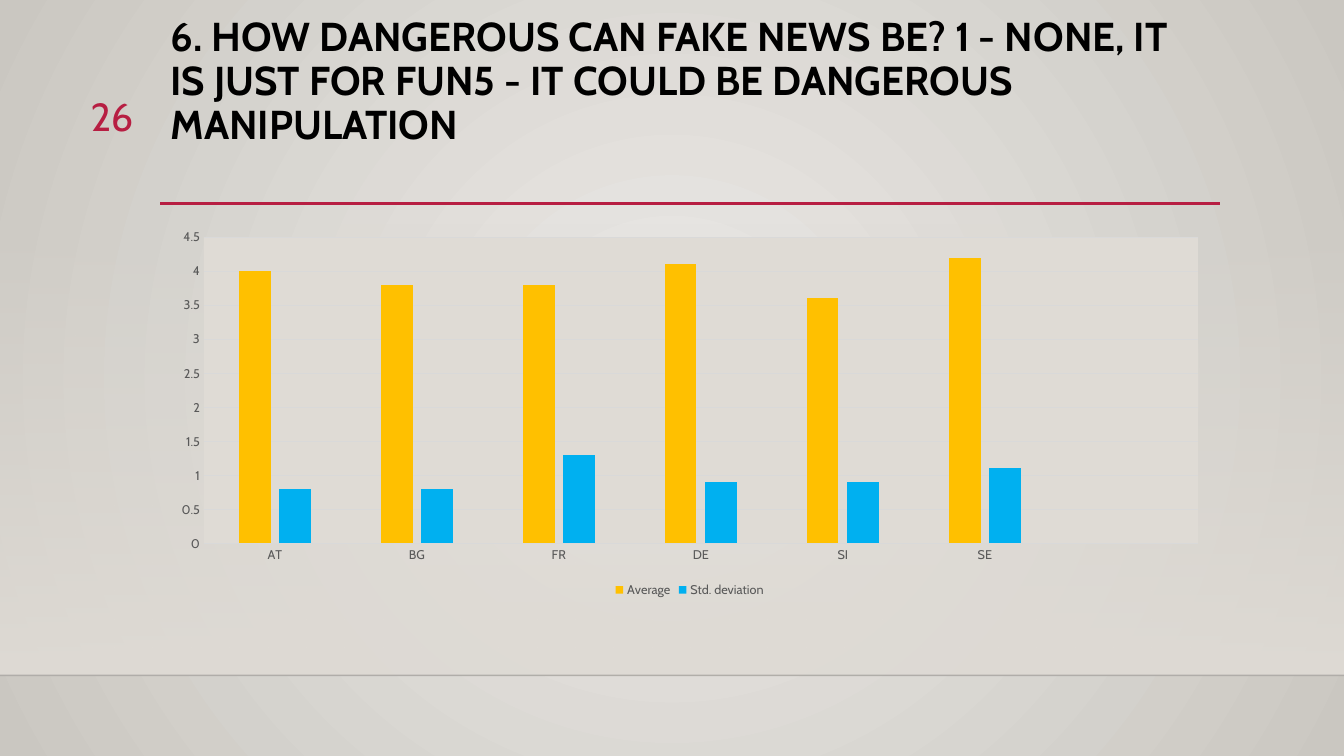
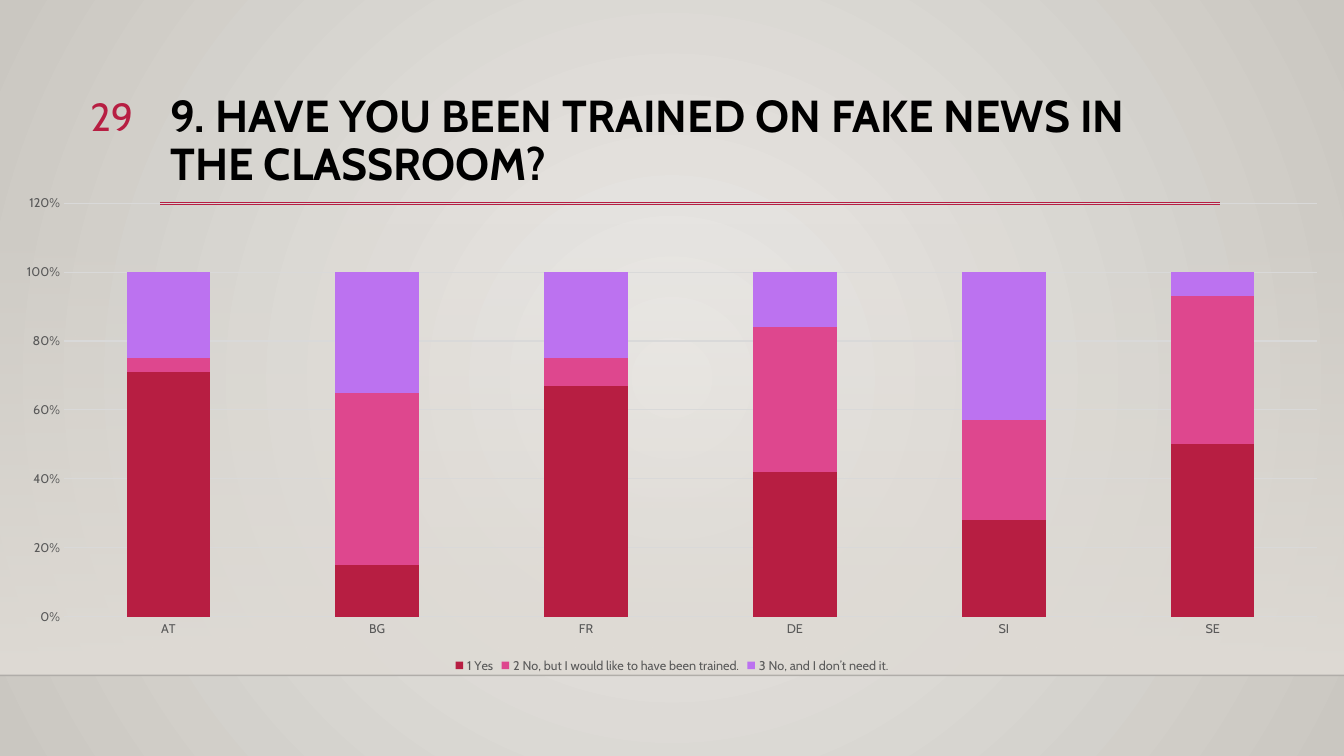
from lxml.etree import SubElement
from pptx import Presentation
from pptx.chart.data import CategoryChartData
from pptx.dml.color import RGBColor
from pptx.enum.chart import XL_CHART_TYPE, XL_LEGEND_POSITION, XL_TICK_MARK
from pptx.enum.shapes import MSO_CONNECTOR, MSO_SHAPE
from pptx.enum.text import MSO_ANCHOR, MSO_AUTO_SIZE, PP_ALIGN
from pptx.oxml.ns import qn
from pptx.util import Inches, Pt

FONT = "Cabin"
RED = "B71E42"
PINK = "DE478E"
PURPLE = "BC72F0"
AMBER = "FFC000"
BLUE = "00B0F0"
SAND = "DFDBD5"
BLACK = "000000"
GREY = "595959"
GRID = "D9D9D9"

WIDTH, HEIGHT = 13.33, 7.5
CONTENT_LEFT, CONTENT_WIDTH = 1.59, 10.5
FLOOR = 6.7
BAND_TOP = 2.21
COUNTRIES = ["AT", "BG", "FR", "DE", "SI", "SE"]


def rgb(color):
    return RGBColor.from_string(color)


def set_font(font, size, color, bold=False):
    font.name = FONT
    font.size = Pt(size)
    font.bold = bold
    font.color.rgb = rgb(color)


def set_gradient(element, stops, radial=False):
    """Fill the first gradient in element with (position, color, opacity) stops."""
    gradient = element.find(".//" + qn("a:gradFill"))
    for child in list(gradient):
        gradient.remove(child)
    stop_list = SubElement(gradient, qn("a:gsLst"))
    for position, color, opacity in stops:
        stop = SubElement(stop_list, qn("a:gs"), pos=str(position * 1000))
        tint = SubElement(stop, qn("a:srgbClr"), val=color)
        if opacity < 100:
            SubElement(tint, qn("a:alpha"), val=str(opacity * 1000))
    if radial:
        path = SubElement(gradient, qn("a:path"), path="circle")
        SubElement(path, qn("a:fillToRect"), l="50000", t="50000", r="50000", b="50000")
    else:
        SubElement(gradient, qn("a:lin"), ang="5400000", scaled="0")


def write_text(shape, text, size, color, bold=False, align=PP_ALIGN.LEFT, spacing=1.0):
    frame = shape.text_frame
    frame.word_wrap = True
    frame.auto_size = MSO_AUTO_SIZE.NONE
    frame.vertical_anchor = MSO_ANCHOR.TOP
    para = frame.paragraphs[0]
    para.alignment = align
    para.line_spacing = spacing
    span = para.add_run()
    span.text = text
    set_font(span.font, size, color, bold)


def add_rule(page, left, right, top, color, weight, opacity=100):
    rule = page.shapes.add_connector(
        MSO_CONNECTOR.STRAIGHT, Inches(left), Inches(top), Inches(right), Inches(top))
    rule.line.color.rgb = rgb(color)
    rule.line.width = Pt(weight)
    properties = rule._element.spPr
    SubElement(properties, qn("a:effectLst"))
    if opacity < 100:
        tint = properties.find(".//" + qn("a:srgbClr"))
        SubElement(tint, qn("a:alpha"), val=str(opacity * 1000))


def add_band(page):
    band = page.shapes.add_shape(
        MSO_SHAPE.RECTANGLE, 0, Inches(BAND_TOP), Inches(WIDTH), Inches(FLOOR - BAND_TOP))
    band.shadow.inherit = False
    band.line.fill.background()
    band.fill.gradient()
    set_gradient(band._element.spPr, [(0, SAND, 0), (100, SAND, 100)])


def add_page(deck, number, title, title_top, title_size):
    page = deck.slides.add_slide(deck.slide_layouts[5])
    add_band(page)
    add_rule(page, 0, WIDTH, FLOOR, "000001", 1, opacity=20)
    add_rule(page, CONTENT_LEFT, 12.1, 2.02, RED, 2.5)
    heading = page.shapes.title
    heading.left, heading.top = Inches(CONTENT_LEFT), Inches(title_top)
    heading.width, heading.height = Inches(CONTENT_WIDTH), Inches(1.15)
    write_text(heading, title, title_size, BLACK, bold=True, spacing=0.9)
    box = page.shapes.add_textbox(Inches(0.53), Inches(0.87), Inches(0.89), Inches(0.55))
    write_text(box, str(number), 28, RED, align=PP_ALIGN.RIGHT)
    return page


def make_area_properties(parent, color=None):
    """Give a chart part a solid fill, or none, and no outline."""
    properties = SubElement(parent, qn("c:spPr"))
    if color:
        SubElement(SubElement(properties, qn("a:solidFill")), qn("a:srgbClr"), val=color)
    else:
        SubElement(properties, qn("a:noFill"))
    SubElement(SubElement(properties, qn("a:ln")), qn("a:noFill"))
    return properties


def format_axes(chart, maximum, step, number_format):
    for axis in (chart.category_axis, chart.value_axis):
        axis.major_tick_mark = axis.minor_tick_mark = XL_TICK_MARK.NONE
        set_font(axis.tick_labels.font, 9, GREY)
    values = chart.value_axis
    values.minimum_scale, values.maximum_scale, values.major_unit = 0, maximum, step
    values.tick_labels.number_format = number_format
    values.tick_labels.number_format_is_linked = False
    values.format.line.fill.background()
    for line in (chart.category_axis.format.line, values.major_gridlines.format.line):
        line.color.rgb = rgb(GRID)
        line.width = Pt(0.75)


def add_columns(page, kind, place, categories, series, gap, overlap, maximum, step,
                number_format="General", plot_color=None):
    """Add a column chart from (name, color, values) series."""
    data = CategoryChartData(number_format=number_format)
    data.categories = categories
    for name, _, values in series:
        data.add_series(name, values)
    chart = page.shapes.add_chart(kind, *map(Inches, place), data).chart
    chart.has_title = False
    set_font(chart.font, 10, BLACK)
    chart.has_legend = True
    chart.legend.position = XL_LEGEND_POSITION.BOTTOM
    chart.legend.include_in_layout = False
    set_font(chart.legend.font, 9, GREY)
    format_axes(chart, maximum, step, number_format)
    plot = chart.plots[0]
    plot.vary_by_categories = False
    plot.gap_width, plot.overlap = gap, overlap
    for column, (_, color, _) in zip(plot.series, series):
        column.format.fill.solid()
        column.format.fill.fore_color.rgb = rgb(color)
        column.invert_if_negative = False
    space = chart._chartSpace
    space.find(qn("c:chart")).addnext(make_area_properties(space))
    make_area_properties(space.find(".//" + qn("c:plotArea")), plot_color)


def add_danger_page(deck):
    page = add_page(
        deck, 26,
        "6. HOW DANGEROUS CAN FAKE NEWS BE? 1 - NONE, IT IS JUST FOR FUN5 - "
        "IT COULD BE DANGEROUS MANIPULATION", 0.12, 28.8)
    add_columns(
        page, XL_CHART_TYPE.COLUMN_CLUSTERED, (CONTENT_LEFT, 2.2, CONTENT_WIDTH, 3.77),
        COUNTRIES + [""],
        [("Average", AMBER, [4, 3.8, 3.8, 4.1, 3.6, 4.2, None]),
         ("Std. deviation", BLUE, [0.8, 0.8, 1.3, 0.9, 0.9, 1.1, None])],
        gap=219, overlap=-27, maximum=4.5, step=0.5, plot_color=SAND)


def add_training_page(deck):
    page = add_page(
        deck, 29, "9. HAVE YOU BEEN TRAINED ON FAKE NEWS IN THE CLASSROOM?", 0.88, 32)
    add_columns(
        page, XL_CHART_TYPE.COLUMN_STACKED, (0, 1.84, WIDTH, 4.88), COUNTRIES,
        [("1 Yes", RED, [0.71, 0.15, 0.67, 0.42, 0.28, 0.5]),
         ("2 No, but I would like to have been trained.", PINK,
          [0.04, 0.5, 0.08, 0.42, 0.29, 0.43]),
         ("3 No, and I don’t need it.", PURPLE, [0.25, 0.35, 0.25, 0.16, 0.43, 0.07])],
        gap=150, overlap=100, maximum=1.2, step=0.2, number_format="0%")


def main():
    deck = Presentation()
    deck.slide_width, deck.slide_height = Inches(WIDTH), Inches(HEIGHT)
    master = deck.slide_master
    master.background.fill.gradient()
    set_gradient(master.element, [(0, "ECEAE7", 100), (100, "CAC7C1", 100)], radial=True)
    add_danger_page(deck)
    add_training_page(deck)
    deck.save("out.pptx")


if __name__ == "__main__":
    main()
